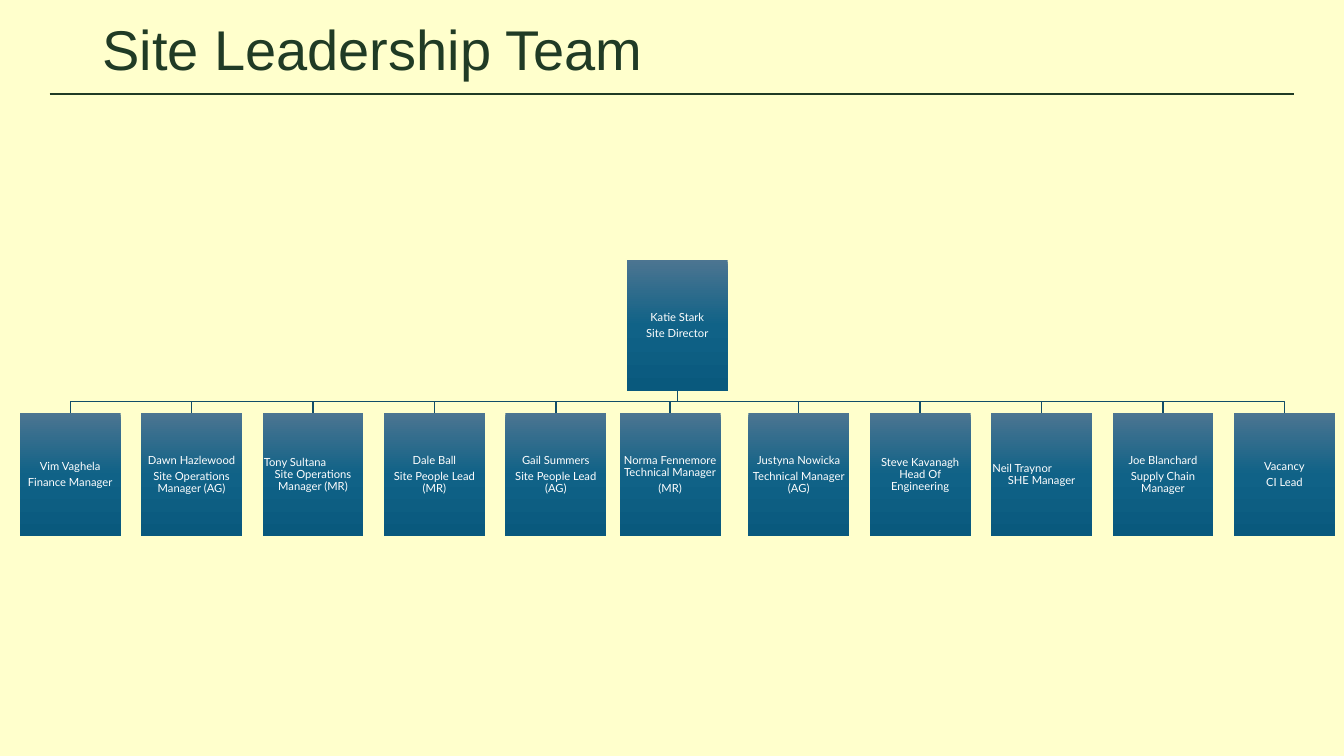
from copy import deepcopy
from lxml.etree import SubElement
from pptx import Presentation
from pptx.dml.color import RGBColor
from pptx.enum.shapes import MSO_CONNECTOR, MSO_SHAPE
from pptx.enum.text import MSO_ANCHOR, PP_ALIGN
from pptx.oxml.ns import qn
from pptx.util import Cm, Pt

TITLE = "Site Leadership Team"
BOSS = ["Katie Stark", "Site Director"]
TEAM = [
    ["Vim Vaghela", "Finance Manager"],
    ["Dawn Hazlewood", "Site Operations Manager (AG)"],
    ["Tony Sultana", "Site Operations Manager (MR)"],
    ["Dale Ball", "Site People Lead (MR)"],
    ["Gail Summers", "Site People Lead (AG)"],
    ["Norma Fennemore Technical Manager", "(MR)"],
    ["Justyna Nowicka", "Technical Manager (AG)"],
    ["Steve Kavanagh Head Of Engineering"],
    ["Neil Traynor", "SHE Manager"],
    ["Joe Blanchard", "Supply Chain Manager"],
    ["Vacancy", "CI Lead"],
]
LEFT_NAMES = ["Tony Sultana", "Neil Traynor"]
SHIFT = {5: -0.18}
STOPS = [(0, "4C7591"), (0.5, "106287"), (1, "09597D")]
DARK, LINK, PAPER, WHITE = "203B25", "114D68", "FFFFCC", "FFFFFF"

WIDE, PITCH, LEFT = 2.54, 3.06, 0.5
BOSS_X, BOSS_Y, BOSS_H = 15.8, 6.55, 3.3
TEAM_Y, TEAM_H = 10.4, 3.12


def color(code):
    return RGBColor.from_string(code)


def style(par, size, face, code):
    par.line_spacing = 0.9
    par.font.size = Pt(size)
    par.font.name = face
    par.font.color.rgb = color(code)


def shade(shape):
    fill = shape.fill
    fill.gradient()
    fill.gradient_angle = 270
    first = shape._element.spPr.find(".//" + qn("a:gs"))
    first.addnext(deepcopy(first))
    for stop, (place, code) in zip(fill.gradient_stops, STOPS):
        stop.position = place
        stop.color.rgb = color(code)


def add_card(x, y, high, lines):
    card = slide.shapes.add_shape(
        MSO_SHAPE.RECTANGLE, Cm(x), Cm(y), Cm(WIDE), Cm(high))
    card.shadow.inherit = False
    card.line.fill.background()
    shade(card)
    frame = card.text_frame
    frame.word_wrap = True
    frame.vertical_anchor = MSO_ANCHOR.MIDDLE
    frame.margin_left = frame.margin_right = Cm(0.03)
    frame.margin_top = frame.margin_bottom = Cm(0.03)
    for i, line in enumerate(lines):
        par = frame.paragraphs[0] if i == 0 else frame.add_paragraph()
        par.text = line
        left = line in LEFT_NAMES
        par.alignment = PP_ALIGN.LEFT if left else PP_ALIGN.CENTER
        par.space_after = Pt(0 if left else 2.8)
        style(par, 8, "Lato", WHITE)


def add_link(x):
    top, mid = BOSS_Y + BOSS_H, (BOSS_Y + BOSS_H + TEAM_Y) / 2
    start = BOSS_X + WIDE / 2
    pen = slide.shapes.build_freeform(Cm(start), Cm(top))
    points = [(start, mid), (x, mid), (x, TEAM_Y)]
    pen.add_line_segments([(Cm(a), Cm(b)) for a, b in points], close=False)
    link = pen.convert_to_shape()
    link.shadow.inherit = False
    link.fill.background()
    link.line.color.rgb = color(LINK)
    link.line.width = Pt(1)


deck = Presentation()
deck.slide_width, deck.slide_height = Cm(33.87), Cm(19.05)
slide = deck.slides.add_slide(deck.slide_layouts[6])
back = slide.background.fill
back.solid()
back.fore_color.rgb = color(PAPER)

rule = slide.shapes.add_connector(
    MSO_CONNECTOR.STRAIGHT, Cm(1.25), Cm(2.37), Cm(32.61), Cm(2.37))
rule.line.color.rgb = color(DARK)
rule.line.width = Pt(1.5)
SubElement(rule._element.spPr, qn("a:effectLst"))

head = slide.shapes.add_textbox(Cm(2.33), Cm(0.28), Cm(29.21), Cm(2.06))
head.text_frame.word_wrap = True
head.text_frame.vertical_anchor = MSO_ANCHOR.MIDDLE
head.text_frame.text = TITLE
style(head.text_frame.paragraphs[0], 40, "Arial", DARK)

spots = [LEFT + i * PITCH + SHIFT.get(i, 0) for i in range(len(TEAM))]
for x in spots:
    add_link(x + WIDE / 2)
add_card(BOSS_X, BOSS_Y, BOSS_H, BOSS)
for x, lines in zip(spots, TEAM):
    add_card(x, TEAM_Y, TEAM_H, lines)

deck.save("out.pptx")
